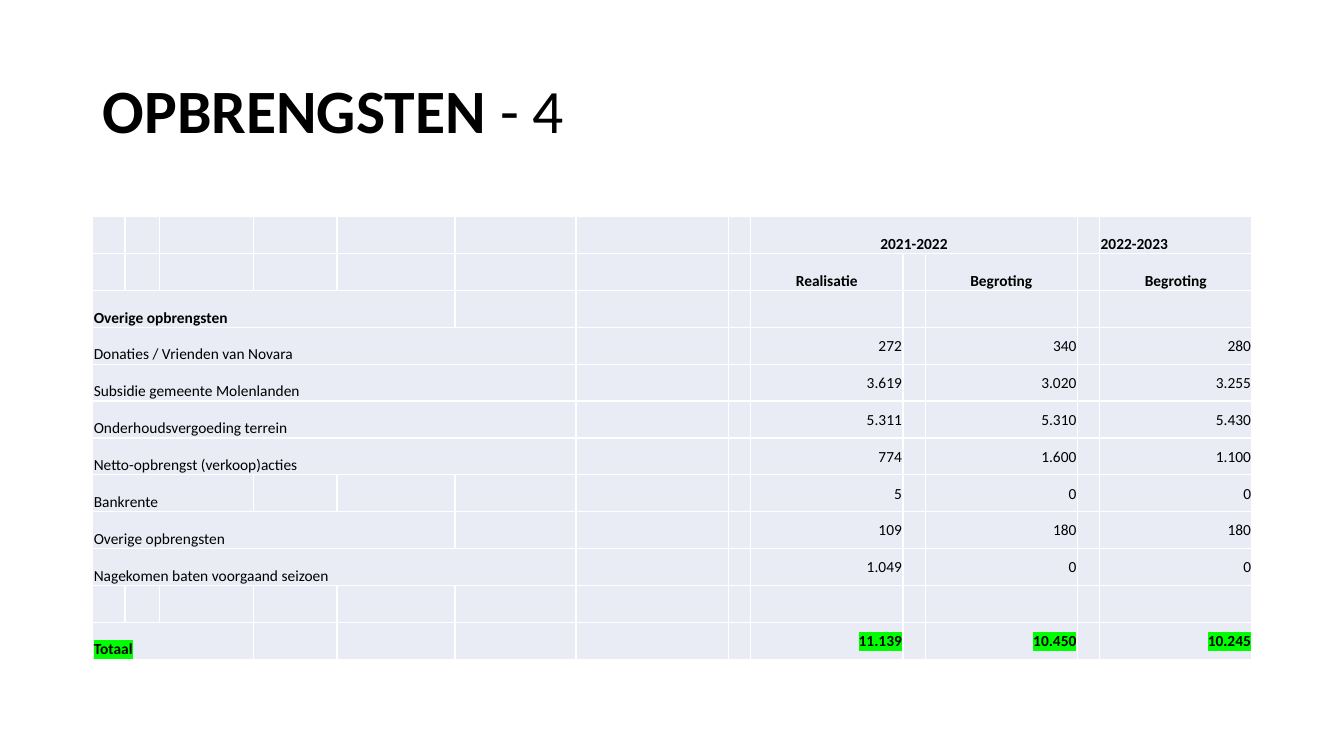
import dataclasses

import lxml.etree
import pptx
import pptx.dml.color
import pptx.enum.text
import pptx.oxml.ns
import pptx.util

ALIGN = pptx.enum.text.PP_ALIGN
ANCHOR = pptx.enum.text.MSO_ANCHOR


@dataclasses.dataclass(frozen=True)
class Theme:
    font: str = "Calibri"
    ink: str = "000000"
    cell: str = "E9EBF5"
    mark: str = "00FF00"
    title: int = 44
    body: int = 11


class Deck:
    def __init__(self, theme):
        self.theme = theme
        self.file = pptx.Presentation()
        self.file.slide_width = pptx.util.Inches(13.33)
        self.file.slide_height = pptx.util.Inches(7.5)
        self.slide = self.file.slides.add_slide(self.file.slide_layouts[6])

    def box(self, left, top, width, height):
        """Turn shares of the slide's size into lengths."""
        wide, high = self.file.slide_width, self.file.slide_height
        return [int(n) for n in (left * wide, top * high, width * wide, height * high)]

    def run(self, para, text, size, bold=False, mark=None):
        run = para.add_run()
        run.text = text
        font = run.font
        font.name, font.size, font.bold = self.theme.font, pptx.util.Pt(size), bold
        font.color.rgb = pptx.dml.color.RGBColor.from_string(self.theme.ink)
        if mark:
            name = pptx.oxml.ns.qn
            light = lxml.etree.Element(name("a:highlight"))
            lxml.etree.SubElement(light, name("a:srgbClr"), val=mark)
            run._r.rPr.find(name("a:solidFill")).addnext(light)

    def title(self, area, parts):
        frame = self.slide.shapes.add_textbox(*self.box(*area)).text_frame
        frame.word_wrap = True
        frame.vertical_anchor = ANCHOR.MIDDLE
        para = frame.paragraphs[0]
        para.line_spacing = 0.9
        for text, bold in parts:
            self.run(para, text, self.theme.title, bold)

    def table(self, area, count, widths):
        """Add an evenly filled table; widths are relative column weights."""
        left, top, width, height = self.box(*area)
        shape = self.slide.shapes.add_table(count, len(widths), left, top, width, height)
        table = shape.table
        table.first_row = table.horz_banding = False
        for column, part in zip(table.columns, widths):
            column.width = int(width * part / sum(widths))
        for row in table.rows:
            row.height = height // count
        for cell in table.iter_cells():
            cell.fill.solid()
            cell.fill.fore_color.rgb = pptx.dml.color.RGBColor.from_string(self.theme.cell)
            cell.margin_left = cell.margin_right = cell.margin_top = pptx.util.Inches(0.01)
            cell.margin_bottom = 0
        return table

    def cell(self, table, row, col, text, span=1, align=ALIGN.LEFT,
             anchor=ANCHOR.BOTTOM, bold=False, mark=None):
        cell = table.cell(row, col)
        if span > 1:
            cell.merge(table.cell(row, col + span - 1))
        cell.vertical_anchor = anchor
        para = cell.text_frame.paragraphs[0]
        para.alignment = align
        self.run(para, text, self.theme.body, bold, mark)

    def save(self):
        self.file.save("out.pptx")


WIDTHS = [0.32, 0.34, 0.93, 0.83, 1.17, 1.2, 1.51] + [0.22, 1.51] * 3
YEARS = (8, 10, 12)
HEADS = ("Realisatie", "Begroting", "Begroting")
# Row number, label, columns spanned, amounts
ROWS = [
    (2, "Overige opbrengsten", 5, ()),
    (3, "Donaties / Vrienden van Novara", 6, ("272", "340", "280")),
    (4, "Subsidie gemeente Molenlanden", 6, ("3.619", "3.020", "3.255")),
    (5, "Onderhoudsvergoeding terrein", 6, ("5.311", "5.310", "5.430")),
    (6, "Netto-opbrengst (verkoop)acties", 6, ("774", "1.600", "1.100")),
    (7, "Bankrente", 3, ("5", "0", "0")),
    (8, "Overige opbrengsten", 5, ("109", "180", "180")),
    (9, "Nagekomen baten voorgaand seizoen", 6, ("1.049", "0", "0")),
    (11, "Totaal", 3, ("11.139", "10.450", "10.245")),
]


def main():
    theme = Theme()
    deck = Deck(theme)
    left, width = 0.92 / 13.33, 11.5 / 13.33
    deck.title((left, 0.4 / 7.5, width, 1.45 / 7.5), [("OPBRENGSTEN", True), (" - 4", False)])

    total = ROWS[-1][0]
    table = deck.table((left, 2.15 / 7.5, width, 4.39 / 7.5), total + 1, WIDTHS)
    deck.cell(table, 0, YEARS[0], "2021-2022", span=3, align=ALIGN.CENTER, bold=True)
    deck.cell(table, 0, YEARS[2], "2022-2023", bold=True)
    for col, head in zip(YEARS, HEADS):
        deck.cell(table, 1, col, head, align=ALIGN.CENTER, bold=True)
    for row, label, span, sums in ROWS:
        bold = row in (2, total)
        mark = theme.mark if row == total else None
        deck.cell(table, row, 0, label, span, bold=bold, mark=mark)
        for col, text in zip(YEARS, sums):
            deck.cell(table, row, col, text, align=ALIGN.RIGHT,
                      anchor=ANCHOR.MIDDLE, bold=bold, mark=mark)
    deck.save()


if __name__ == "__main__":
    main()
